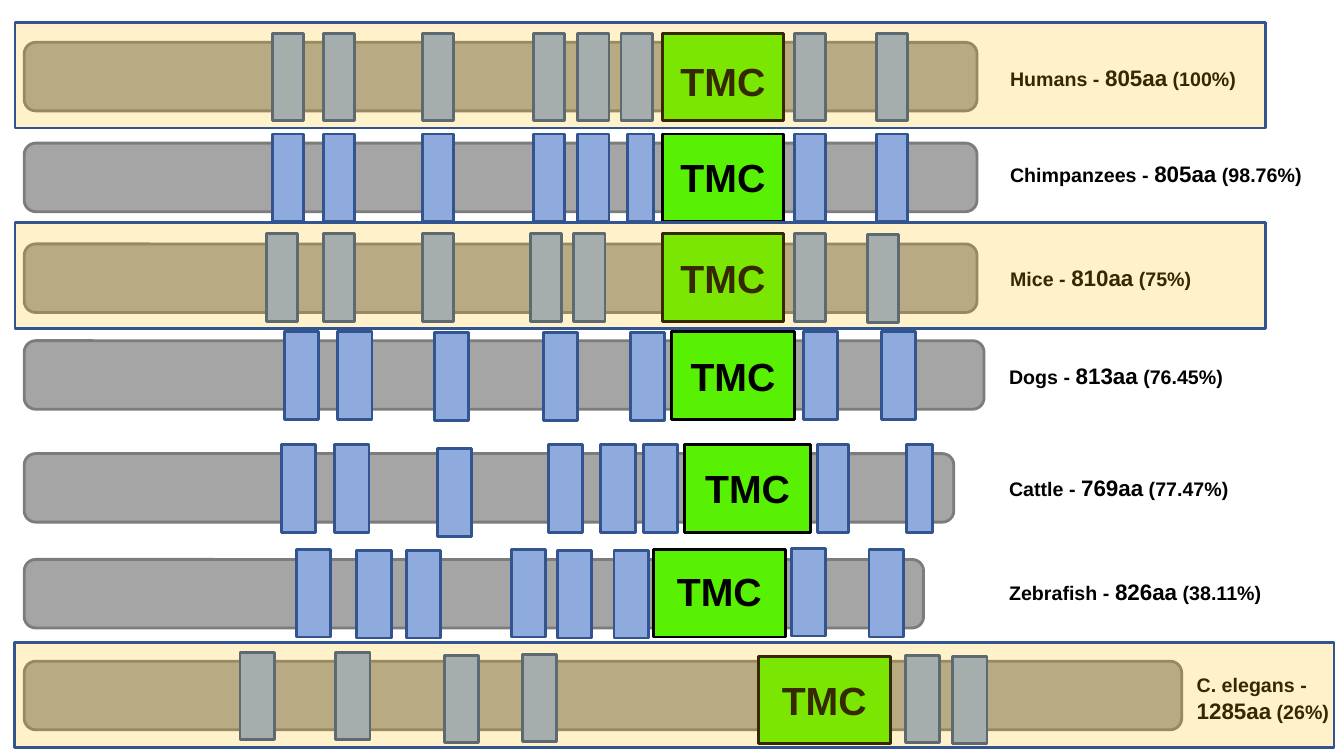
from pptx import Presentation
from pptx import util as u
from pptx.dml import color
from pptx.enum import shapes, text
from pptx.oxml import ns
from lxml import etree

# Content: each row is one species, lengths in inches.
# bar = (top, width), tmc = (left, top, width, label top), label = (left, top, width, height)
# shifts and widths hold the helices that differ from their row, keyed by left edge
SPECIES = [
    dict(name="Humans", length="805aa", match="100%", bar=(0.42, 9.45),
         tmc=(6.57, 0.33, 1.2, 0.52), label=(9.92, 0.59, 2.64, 0.37), helix=(0.33, 0.31),
         lefts=[2.7, 3.21, 4.19, 5.29, 5.73, 6.16, 7.88, 8.69]),
    dict(name="Chimpanzees", length="805aa", match="98.76%", bar=(1.42, 9.45),
         tmc=(6.57, 1.33, 1.2, 1.47), label=(9.92, 1.54, 3.17, 0.37), helix=(1.33, 0.31),
         lefts=[2.7, 3.21, 4.19, 5.29, 5.73, 6.22, 7.88, 8.69], widths={6.22: 0.26}),
    dict(name="Mice", length="810aa", match="75%", bar=(2.42, 9.45),
         tmc=(6.57, 2.32, 1.2, 2.47), label=(9.92, 2.57, 2.64, 0.37), helix=(2.32, 0.31),
         lefts=[2.64, 3.21, 4.19, 5.26, 5.69, 7.88, 8.6], shifts={8.6: 0.01}),
    dict(name="Dogs", length="813aa", match="76.45%", bar=(3.38, 9.52),
         tmc=(6.66, 3.29, 1.22, 3.45), label=(9.91, 3.54, 2.64, 0.37), helix=(3.29, 0.34),
         lefts=[2.82, 3.35, 4.31, 5.39, 6.25, 7.97, 8.74],
         shifts={4.31: 0.01, 5.39: 0.01, 6.25: 0.01}),
    dict(name="Cattle", length="769aa", match="77.47%", bar=(4.5, 9.22),
         tmc=(6.79, 4.41, 1.25, 4.56), label=(9.91, 4.65, 2.64, 0.37), helix=(4.41, 0.34),
         lefts=[2.79, 3.32, 4.34, 5.44, 5.96, 6.38, 8.11, 8.99],
         shifts={4.34: 0.04}, widths={8.11: 0.31, 8.99: 0.26}),
    dict(name="Zebrafish", length="826aa", match="38.11%", bar=(5.55, 8.92),
         tmc=(6.48, 5.45, 1.31, 5.58), label=(9.91, 5.69, 2.85, 0.37), helix=(5.45, 0.34),
         lefts=[2.94, 3.54, 4.03, 5.07, 5.53, 6.09, 7.85, 8.62],
         shifts={3.54: 0.01, 4.03: 0.01, 5.53: 0.01, 6.09: 0.01, 7.85: -0.01}),
    dict(name="C. elegans", length="1285aa", match="26%", bar=(6.56, 11.48),
         tmc=(7.52, 6.51, 1.31, 6.66), label=(11.77, 6.63, 1.58, 0.61), helix=(6.47, 0.34),
         lefts=[2.38, 3.33, 4.41, 5.18, 8.98, 9.45],
         shifts={4.41: 0.03, 5.18: 0.02, 8.98: 0.03, 9.45: 0.04}),
]
HIGHLIGHTS = [(0.15, 0.22, 12.4, 1.05), (0.15, 2.21, 12.4, 1.05), (0.14, 6.37, 13.09, 1.05)]
BAR_LEFT, BAR_HEIGHT, DOMAIN_HEIGHT = 0.24, 0.68, 0.87
TMC_LABEL_WIDTH, TMC_LABEL_HEIGHT = 1.06, 0.57
STYLES = {"bar": ("A5A5A5", "7C7C7C"), "tmc": ("58F103", "000000"),
          "helix": ("8FAADC", "325491"), "highlight": ("FFC000", "325491")}
HIGHLIGHT_OPACITY = 21000
RECT, ROUND = shapes.MSO_SHAPE.RECTANGLE, shapes.MSO_SHAPE.ROUNDED_RECTANGLE

presentation = Presentation()
presentation.slide_width = u.Inches(13.33)
presentation.slide_height = u.Inches(7.5)
slide = presentation.slides.add_slide(presentation.slide_layouts[6])


def paint(target, hex_color):
    target.rgb = color.RGBColor.from_string(hex_color)


def add_box(parent, kind, style, *place):
    shape = parent.add_shape(kind, *map(u.Inches, place))
    fill, line = STYLES[style]
    shape.shadow.inherit = False
    shape.fill.solid()
    paint(shape.fill.fore_color, fill)
    paint(shape.line.color, line)
    shape.line.width = u.Pt(2)
    return shape


def add_text(place, runs, wrap=True, align=text.PP_ALIGN.LEFT):
    frame = slide.shapes.add_textbox(*map(u.Inches, place)).text_frame
    frame.word_wrap = wrap
    frame.auto_size = text.MSO_AUTO_SIZE.SHAPE_TO_FIT_TEXT
    paragraph = frame.paragraphs[0]
    paragraph.alignment = align
    for words, size in runs:
        run = paragraph.add_run()
        run.text = words
        for key, value in {"name": "Arial", "size": u.Pt(size), "bold": True}.items():
            setattr(run.font, key, value)
        paint(run.font.color, "000000")


# Protein bars with their domains, one group per species
for row in SPECIES:
    group = slide.shapes.add_group_shape().shapes
    bar_top, bar_width = row["bar"]
    add_box(group, ROUND, "bar", BAR_LEFT, bar_top, bar_width, BAR_HEIGHT)
    add_box(group, RECT, "tmc", *row["tmc"][:3], DOMAIN_HEIGHT)
    helix_top, helix_width = row["helix"]
    for left in row["lefts"]:
        top = helix_top + row.get("shifts", {}).get(left, 0)
        width = row.get("widths", {}).get(left, helix_width)
        add_box(group, RECT, "helix", left, top, width, DOMAIN_HEIGHT)

# Species labels and TMC labels centred on their boxes
for row in SPECIES:
    add_text(row["label"], [(f"{row['name']} - ", 14), (row["length"], 16),
                            (f" ({row['match']})", 14)])
    left, _, width, label_top = row["tmc"]
    label_left = left + (width - TMC_LABEL_WIDTH) / 2
    add_text((label_left, label_top, TMC_LABEL_WIDTH, TMC_LABEL_HEIGHT), [("TMC", 28)],
             wrap=False, align=text.PP_ALIGN.CENTER)

# Translucent highlights over selected species
for place in HIGHLIGHTS:
    highlight = add_box(slide.shapes, RECT, "highlight", *place)
    fill_color = highlight.fill._xPr.find(ns.qn("a:solidFill"))[0]
    etree.SubElement(fill_color, ns.qn("a:alpha"), val=str(HIGHLIGHT_OPACITY))

presentation.save("out.pptx")
